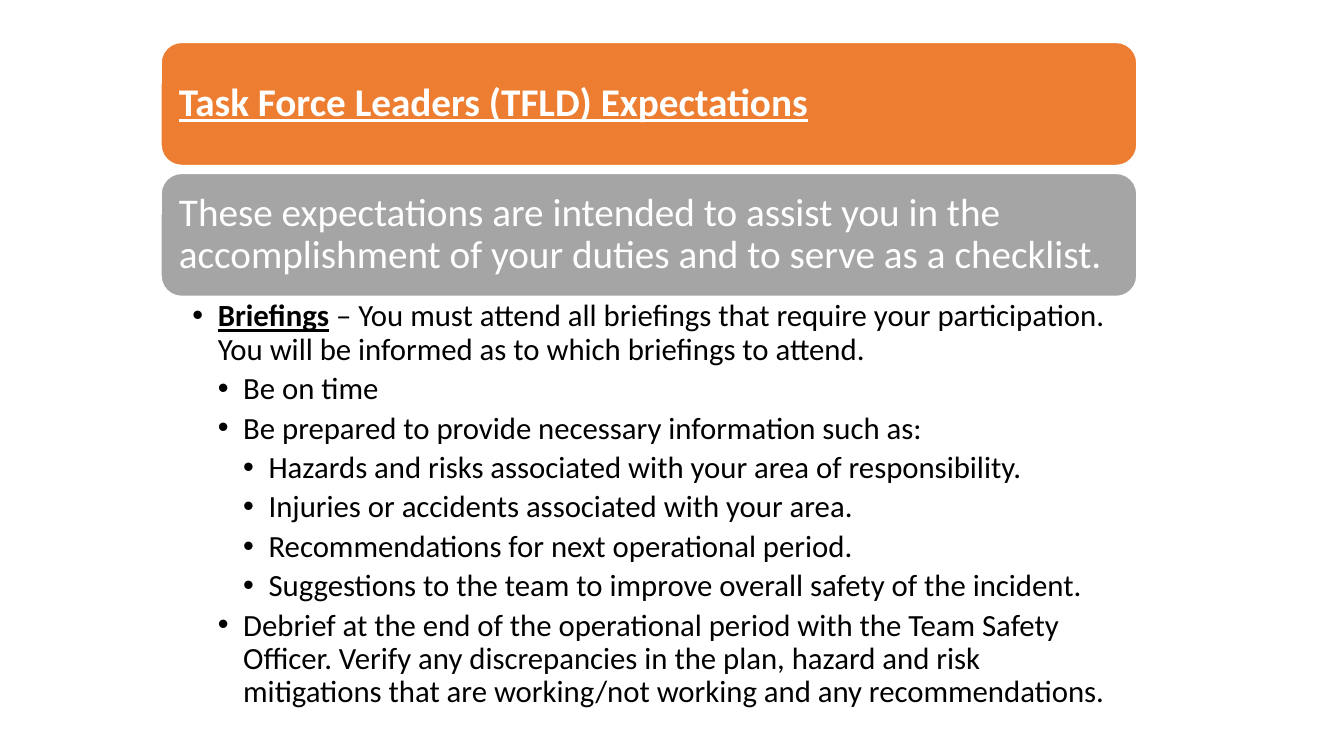
"""Build the slide of expectations for task force leaders."""
import dataclasses

import lxml.etree
import pptx
import pptx.dml.color
import pptx.enum.shapes
import pptx.enum.text
import pptx.oxml.ns
import pptx.slide
import pptx.util

Cm = pptx.util.Cm
Pt = pptx.util.Pt

COLORS = {"title": "ED7D31", "intro": "A5A5A5", "light": "FFFFFF", "dark": "000000"}
LEFT, WIDTH = 4.06, 24.59
TOP, BAND, STEP = 1.07, 3.1, 3.3

BANDS = [
    ("title", "Task Force Leaders (TFLD) Expectations", True),
    ("intro", "These expectations are intended to assist you in the accomplishment "
              "of your duties and to serve as a checklist.", False),
]
POINTS = [
    (0, "Briefings", " – You must attend all briefings that require your participation. "
                     "You will be informed as to which briefings to attend."),
    (1, "", "Be on time"),
    (1, "", "Be prepared to provide necessary information such as:"),
    (2, "", "Hazards and risks associated with your area of responsibility."),
    (2, "", "Injuries or accidents associated with your area."),
    (2, "", "Recommendations for next operational period."),
    (2, "", "Suggestions to the team to improve overall safety of the incident."),
    (1, "", "Debrief at the end of the operational period with the Team Safety Officer. "
            "Verify any discrepancies in the plan, hazard and risk mitigations that are "
            "working/not working and any recommendations."),
]


@dataclasses.dataclass
class Page:
    """Hold the slide and its style."""

    slide: pptx.slide.Slide
    face: str = "Calibri"
    indent: float = 0.64

    def color(self, name):
        """Return the named colour."""
        return pptx.dml.color.RGBColor.from_string(COLORS[name])

    def style(self, run, size, tint, strong=False):
        """Format a run; strong text is bold and underlined."""
        font = run.font
        font.name, font.size = self.face, Pt(size)
        font.bold = font.underline = strong
        font.color.rgb = self.color(tint)

    def inset(self, frame, left, top, right, bottom):
        """Set the margins of a text frame and wrap it."""
        frame.word_wrap = True
        frame.margin_left, frame.margin_top = Cm(left), Cm(top)
        frame.margin_right, frame.margin_bottom = Cm(right), Cm(bottom)

    def band(self, top, fill, text, strong):
        """Draw a rounded band with its text."""
        shape = self.slide.shapes.add_shape(
            pptx.enum.shapes.MSO_SHAPE.ROUNDED_RECTANGLE,
            Cm(LEFT), Cm(top), Cm(WIDTH), Cm(BAND))
        shape.shadow.inherit = False
        shape.fill.solid()
        shape.fill.fore_color.rgb = self.color(fill)
        shape.line.color.rgb = self.color("light")
        shape.line.width = Pt(1)
        frame = shape.text_frame
        self.inset(frame, 0.3, 0.3, 0.3, 0.3)
        frame.vertical_anchor = pptx.enum.text.MSO_ANCHOR.MIDDLE
        frame.text = text
        para = frame.paragraphs[0]
        para.alignment = pptx.enum.text.PP_ALIGN.LEFT
        para.line_spacing = 0.9
        self.style(para.runs[0], 28, "light", strong)

    def bullet(self, para, level):
        """Indent a paragraph by its level and give it a bullet."""
        para.level = level
        props = para._p.get_or_add_pPr()
        props.set("marL", str(Cm(self.indent * (level + 1))))
        props.set("indent", str(-Cm(self.indent)))
        for tag, key, value in (("a:buFont", "typeface", "Arial"), ("a:buChar", "char", "•")):
            lxml.etree.SubElement(props, pptx.oxml.ns.qn(tag)).set(key, value)

    def points(self, top, height, items):
        """Draw the bulleted list."""
        box = self.slide.shapes.add_textbox(Cm(LEFT), Cm(top), Cm(WIDTH), Cm(height))
        frame = box.text_frame
        self.inset(frame, 0.79, 0.1, 0.56, 0.1)
        for index, (level, lead, text) in enumerate(items):
            para = frame.add_paragraph() if index else frame.paragraphs[0]
            para.line_spacing, para.space_after = 0.9, Pt(4.4)
            self.bullet(para, level)
            para.text = lead or text
            self.style(para.runs[0], 22, "dark", bool(lead))
            if lead:
                rest = para.add_run()
                rest.text = text
                self.style(rest, 22, "dark")


def main():
    """Build and save the slide."""
    deck = pptx.Presentation()
    deck.slide_width, deck.slide_height = Cm(33.87), Cm(19.05)
    page = Page(deck.slides.add_slide(deck.slide_layouts[6]))
    for row, (fill, text, strong) in enumerate(BANDS):
        page.band(TOP + row * STEP, fill, text, strong)
    page.points(TOP + STEP + BAND, 10.95, POINTS)
    deck.save("out.pptx")


if __name__ == "__main__":
    main()
